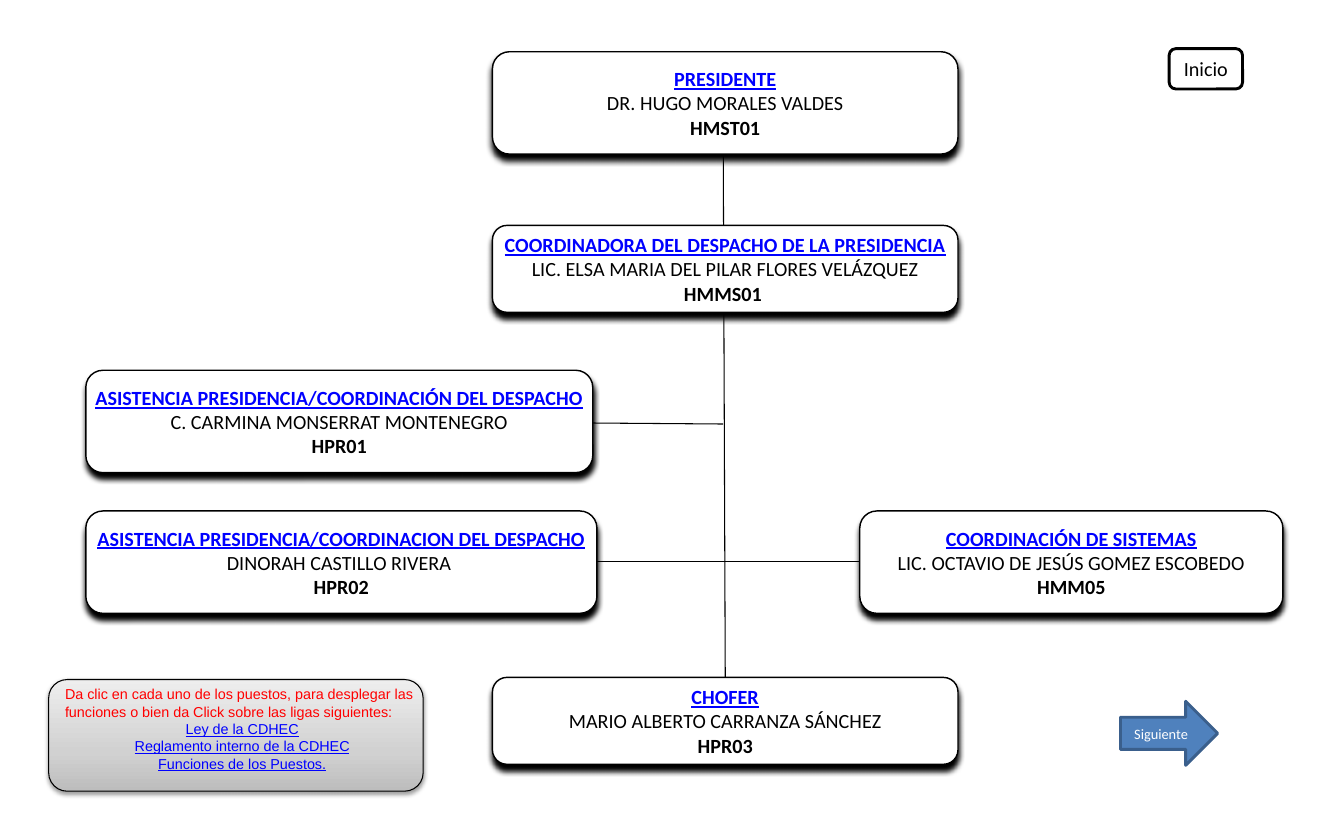
from lxml.etree import SubElement
from pptx import Presentation
from pptx.dml.color import RGBColor
from pptx.enum.shapes import MSO_CONNECTOR, MSO_SHAPE
from pptx.enum.text import MSO_ANCHOR, PP_ALIGN
from pptx.oxml.ns import qn
from pptx.util import Inches, Pt

BLACK, WHITE, LINK, RED = "000000", "FFFFFF", "0000FF", "FF0000"
NOTICE_GRADIENT = [(0, "BDBDBD"), (35, "D1D1D1"), (100, "EEEEEE")]

POSTS = [
    ((4.76, 0.5, 4.5, 0.99), "PRESIDENTE", "DR. HUGO MORALES VALDES", "HMST01"),
    ((4.76, 2.18, 4.5, 0.84), "COORDINADORA DEL DESPACHO DE LA PRESIDENCIA",
     "LIC. ELSA MARIA DEL PILAR FLORES VELÁZQUEZ", "HMMS01 "),
    ((0.83, 3.58, 4.9, 0.99), "ASISTENCIA PRESIDENCIA/COORDINACIÓN DEL DESPACHO",
     "C. CARMINA MONSERRAT MONTENEGRO", "HPR01"),
    ((0.83, 4.94, 4.94, 0.99), "ASISTENCIA PRESIDENCIA/COORDINACION DEL DESPACHO",
     "DINORAH CASTILLO RIVERA ", "HPR02"),
    ((8.31, 4.94, 4.09, 0.99), "COORDINACIÓN DE SISTEMAS",
     "LIC. OCTAVIO DE JESÚS GOMEZ ESCOBEDO", "HMM05"),
    ((4.76, 6.55, 4.5, 0.84), "CHOFER", "MARIO ALBERTO CARRANZA SÁNCHEZ", "HPR03"),
]
BRANCHES = [
    (6.99, 1.26, 7.01, 6.55),
    (5.71, 4.09, 6.99, 4.1),
    (5.77, 5.43, 8.31, 5.43),
]
DOCUMENTS = ["Ley de la CDHEC", "Reglamento interno de la CDHEC", "Funciones de los Puestos."]


def color(value):
    return RGBColor.from_string(value)


def add_text(frame, text, size=14, font="Calibri", fill=BLACK, bold=False,
             underline=False, align=PP_ALIGN.CENTER):
    paragraph = frame.paragraphs[0]
    if paragraph.runs:
        paragraph = frame.add_paragraph()
    paragraph.alignment = align
    run = paragraph.add_run()
    run.text = text
    run.font.size = Pt(size)
    run.font.name = font
    run.font.bold = bold
    run.font.underline = underline
    run.font.color.rgb = color(fill)


def add_box(slide, box, kind=MSO_SHAPE.ROUNDED_RECTANGLE, fill=WHITE, line=BLACK, width=1):
    shape = slide.shapes.add_shape(kind, *map(Inches, box))
    shape.fill.solid()
    shape.fill.fore_color.rgb = color(fill)
    shape.line.color.rgb = color(line)
    shape.line.width = Pt(width)
    shape.shadow.inherit = False
    shape.text_frame.vertical_anchor = MSO_ANCHOR.MIDDLE
    return shape


def add_shadow(shape, blur, distance, opacity):
    effects = shape.element.spPr.find(qn("a:effectLst"))
    shadow = SubElement(effects, qn("a:outerShdw"), blurRad=str(Pt(blur)),
                        dist=str(Pt(distance)), dir="5400000", rotWithShape="0")
    shade = SubElement(shadow, qn("a:srgbClr"), val=BLACK)
    SubElement(shade, qn("a:alpha"), val=str(opacity * 1000))


def set_gradient(shape, stops):
    shape.fill.gradient()
    shape.fill.gradient_angle = 90
    stop_list = shape.element.spPr.find(qn("a:gradFill")).find(qn("a:gsLst"))
    for stop in list(stop_list):
        stop_list.remove(stop)
    for position, value in stops:
        stop = SubElement(stop_list, qn("a:gs"), pos=str(position * 1000))
        SubElement(stop, qn("a:srgbClr"), val=value)


def add_branch(slide, ends):
    connector = slide.shapes.add_connector(MSO_CONNECTOR.STRAIGHT, *map(Inches, ends))
    connector.line.color.rgb = color(BLACK)
    connector.line.width = Pt(0.75)
    SubElement(connector.element.spPr, qn("a:effectLst"))


def add_post(slide, box, title, person, code):
    shape = add_box(slide, box)
    add_shadow(shape, blur=4, distance=4, opacity=100)
    frame = shape.text_frame
    frame.word_wrap = False
    frame.margin_left = frame.margin_right = Inches(0.17)
    frame.margin_top = frame.margin_bottom = Inches(0.09)
    add_text(frame, title, fill=LINK, bold=True, underline=True)
    add_text(frame, person)
    add_text(frame, code, bold=True)


def add_notice(slide, box):
    left, top, width, height = box
    panel = add_box(slide, box, width=0.75)
    set_gradient(panel, NOTICE_GRADIENT)
    add_shadow(panel, blur=3.1, distance=1.6, opacity=38)
    text_box = slide.shapes.add_textbox(
        Inches(left + 0.06), Inches(top + 0.01), Inches(width), Inches(height - 0.14))
    frame = text_box.text_frame
    frame.word_wrap = True
    add_text(frame, "Da clic en cada uno de los puestos, para desplegar las funciones "
             "o bien da Click sobre las ligas siguientes:",
             size=10, font="Arial", fill=RED, align=PP_ALIGN.LEFT)
    for document in DOCUMENTS:
        add_text(frame, document, size=10, font="Arial", fill=LINK, underline=True)


def add_navigation(slide, home_box, next_box):
    home = add_box(slide, home_box, width=2)
    home.text_frame.word_wrap = False
    add_text(home.text_frame, "Inicio")
    following = add_box(slide, next_box, MSO_SHAPE.RIGHT_ARROW, "4F81BD", "3A5F8C", 2)
    following.text_frame.word_wrap = False
    add_text(following.text_frame, "Siguiente", size=10, fill=WHITE)


def main():
    presentation = Presentation()
    presentation.slide_width = Inches(12.99)
    presentation.slide_height = Inches(7.88)
    slide = presentation.slides.add_slide(presentation.slide_layouts[6])
    for ends in BRANCHES:
        add_branch(slide, ends)
    for post in POSTS:
        add_post(slide, *post)
    add_notice(slide, (0.47, 6.57, 3.62, 1.08))
    add_navigation(slide, (11.3, 0.47, 0.71, 0.39), (10.83, 6.78, 0.94, 0.62))
    presentation.save("out.pptx")


if __name__ == "__main__":
    main()
